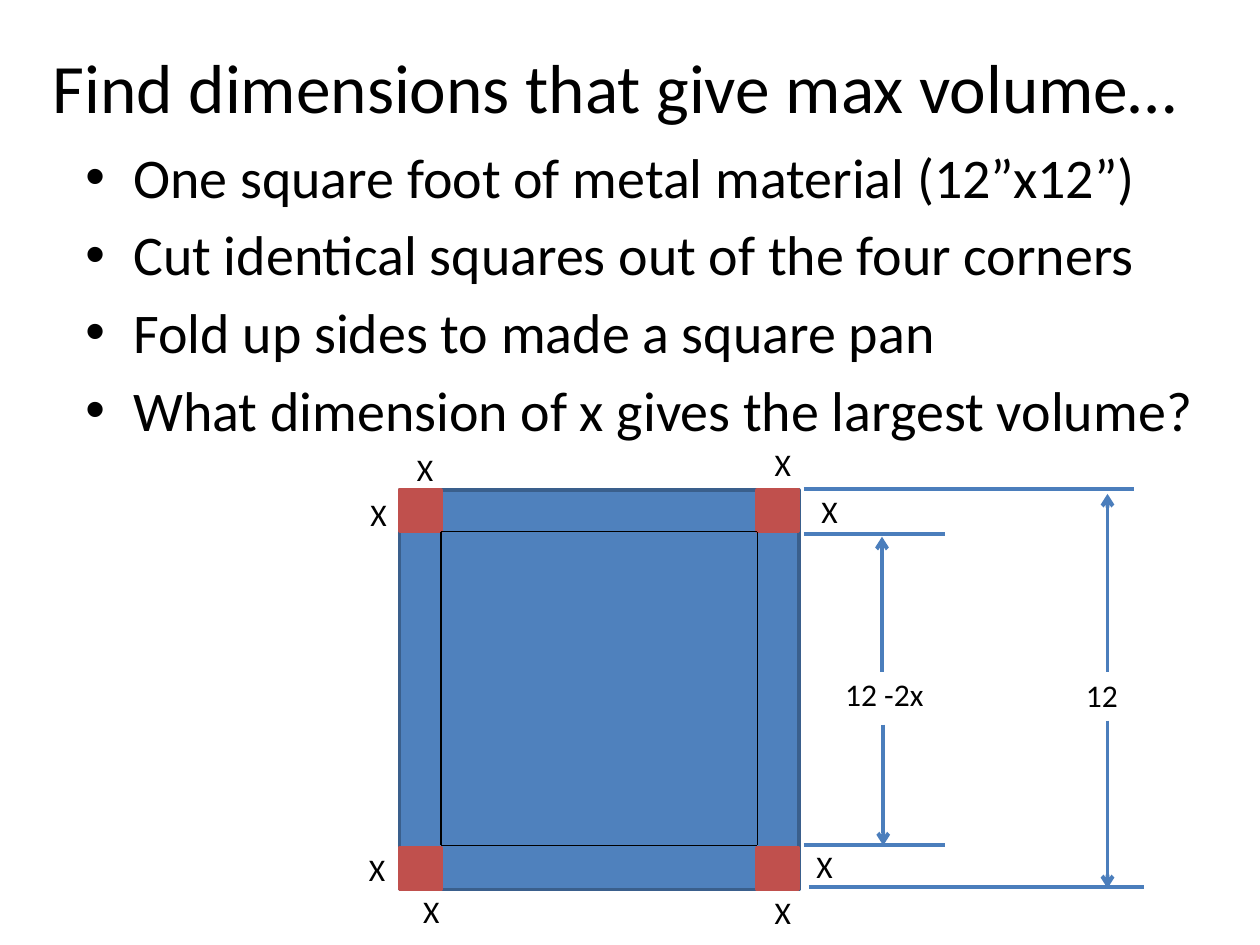
from lxml import etree
from pptx import Presentation
from pptx.dml.color import RGBColor
from pptx.enum import shapes, text
from pptx.oxml.ns import qn
from pptx.util import Inches, Pt

BLACK = RGBColor(0x00, 0x00, 0x00)
BLUE = RGBColor(0x4F, 0x81, 0xBD)
EDGE = RGBColor(0x3A, 0x5F, 0x8C)
RED = RGBColor(0xC0, 0x50, 0x4D)
DIM = RGBColor(0x4B, 0x7E, 0xBC)
FONT = "Calibri"

# Content
TITLE = "Find dimensions that give max volume…"
STEPS = [
    "One square foot of metal material (12”x12”)",
    "Cut identical squares out of the four corners",
    "Fold up sides to made a square pan",
    "What dimension of x gives the largest volume?",
]
LEFT, TOP, SHEET, CUT = 3.17, 3.89, 3.17, 0.33
X_LABELS = [  # left, top
    (3.21, 3.52), (2.84, 3.88), (6.05, 3.48), (6.42, 3.86),
    (2.83, 6.70), (3.26, 7.03), (6.38, 6.67), (6.05, 7.04),
]
EXTENSIONS = [  # x1, x2, y
    (6.38, 9.00, 3.88), (6.42, 9.08, 7.04),
    (6.38, 7.50, 4.24), (6.38, 7.50, 6.71),
]
ARROWS = [  # x, start y, tip y
    (8.79, 5.33, 3.92), (8.79, 5.72, 7.05),
    (7.00, 5.33, 4.26), (7.01, 5.75, 6.71),
]
SIZES = [("12", 8.52, 5.32, 0.54), ("12 -2x", 6.61, 5.31, 1.06)]

prs = Presentation()
prs.slide_width, prs.slide_height = Inches(10), Inches(7.5)
s = prs.slides.add_slide(prs.slide_layouts[5])


def style(p, size):
    for r in p.runs:
        r.font.name, r.font.size = FONT, Pt(size)
        r.font.color.rgb = BLACK


def add_text(lines, x, y, w, h, size=18, align=text.PP_ALIGN.LEFT):
    tf = s.shapes.add_textbox(*map(Inches, (x, y, w, h))).text_frame
    tf.word_wrap = True
    tf.text = "\n".join(lines)
    for p in tf.paragraphs:
        p.alignment = align
        style(p, size)
    return tf


def add_square(x, y, side, fill, edge):
    sp = s.shapes.add_shape(shapes.MSO_SHAPE.RECTANGLE,
                            *map(Inches, (x, y, side, side)))
    sp.shadow.inherit = False
    sp.fill.solid()
    sp.fill.fore_color.rgb = fill
    sp.line.color.rgb, sp.line.width = edge, Pt(2)


def add_line(x1, y1, x2, y2, color=DIM, width=2.25, arrow=False):
    c = s.shapes.add_connector(shapes.MSO_CONNECTOR.STRAIGHT,
                               *map(Inches, (x1, y1, x2, y2)))
    c.line.color.rgb, c.line.width = color, Pt(width)
    if arrow:
        etree.SubElement(c.line._get_or_add_ln(), qn("a:tailEnd"), type="arrow")
    etree.SubElement(c._element.spPr, qn("a:effectLst"))


# Title
title = s.shapes.title
title.left, title.top, title.width, title.height = map(
    Inches, (0.17, 0.33, 9.42, 0.7))
tf = title.text_frame
tf.text = TITLE
tf.auto_size = text.MSO_AUTO_SIZE.NONE
tf.vertical_anchor = text.MSO_ANCHOR.MIDDLE
tf.paragraphs[0].alignment = text.PP_ALIGN.CENTER
style(tf.paragraphs[0], 39.6)

# Bulleted steps
for p in add_text(STEPS, 0.58, 1.08, 9, 2.67, size=32).paragraphs:
    p.space_before = Pt(6)
    pPr = p._p.get_or_add_pPr()
    pPr.set("marL", str(Inches(0.38)))
    pPr.set("indent", str(-Inches(0.38)))
    etree.SubElement(pPr, qn("a:buFont"), typeface="Arial")
    etree.SubElement(pPr, qn("a:buChar"), char="•")

# Metal sheet with its cut-out corners
add_square(LEFT, TOP, SHEET, BLUE, EDGE)
far = SHEET - CUT
for dx in (0, far):
    for dy in (0, far):
        add_square(LEFT + dx, TOP + dy, CUT, RED, RED)

# Fold lines
x1, x2 = LEFT + CUT, LEFT + far
y1, y2 = TOP + CUT, TOP + far - 0.02
for y in (y1, y2):
    add_line(x1, y, x2, y, BLACK, 0.75)
for x in (x1, x2):
    add_line(x, y1, x, y2, BLACK, 0.75)

# Corner labels
for x, y in X_LABELS:
    add_text(["X"], x, y, 0.25, 0.4, align=text.PP_ALIGN.CENTER)

# Dimension lines and sizes
for x1, x2, y in EXTENSIONS:
    add_line(x1, y, x2, y)
for x, start, tip in ARROWS:
    add_line(x, start, x, tip, arrow=True)
for label, x, y, w in SIZES:
    add_text([label], x, y, w, 0.4)

prs.save("out.pptx")
